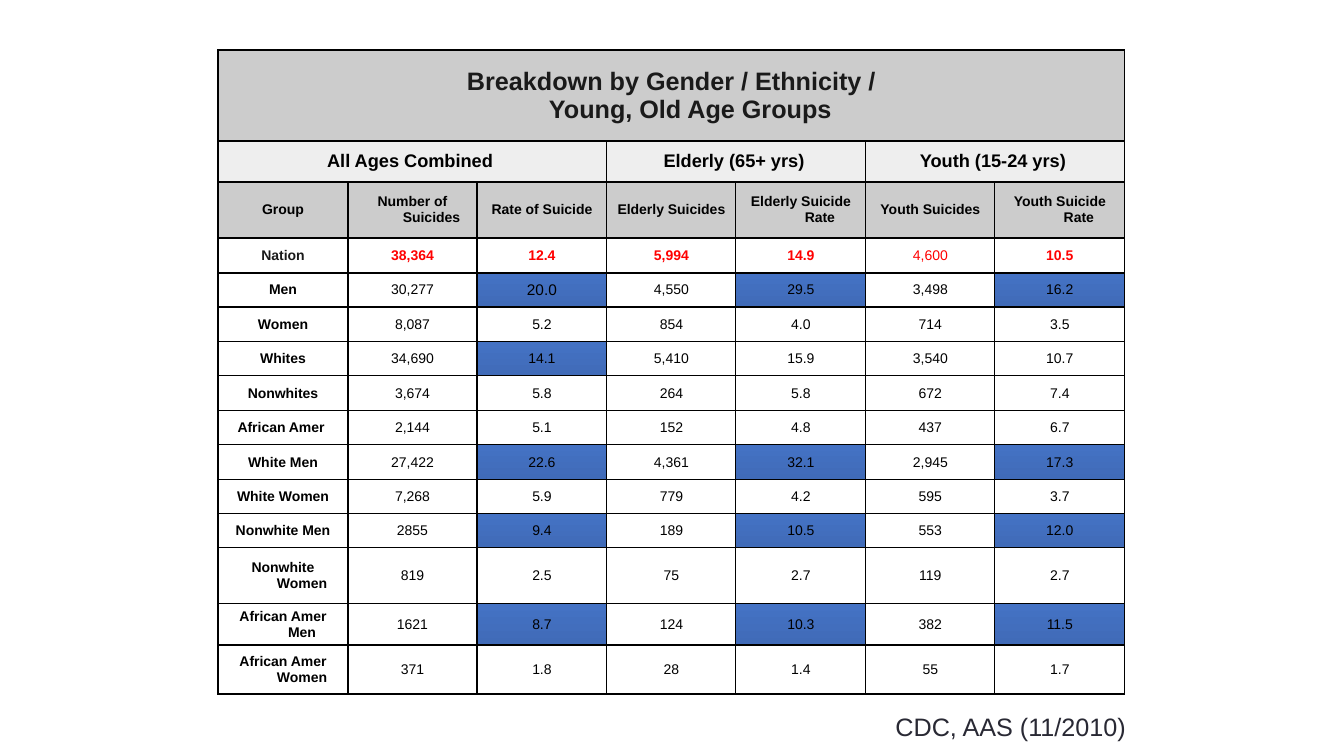
from lxml import etree
from pptx import Presentation
from pptx.dml.color import RGBColor
from pptx.enum.text import MSO_ANCHOR, PP_ALIGN
from pptx.oxml.ns import qn
from pptx.util import Pt

MIDDLE = MSO_ANCHOR.MIDDLE
CENTER, RIGHT = PP_ALIGN.CENTER, PP_ALIGN.RIGHT
BLANK_LAYOUT = 6

BLACK, DARK, RED, WHITE = "000000", "1A1A1A", "FF0000", "FFFFFF"
GRAY, LIGHT = "CCCCCC", "EEEEEE"
BLUES = ("4472C4", "406BB8")

COLUMNS = [130, 129, 130, 129, 130, 129, 130]
ROWS = [91, 41, 56, 35, 34, 35, 34, 35, 34, 35, 34, 34, 56, 41, 49]

TITLE = "Breakdown by Gender / Ethnicity /\nYoung, Old Age Groups"
AGE_GROUPS = [
    (0, 2, "All Ages Combined "),
    (3, 4, "Elderly (65+ yrs) "),
    (5, 6, "Youth (15-24 yrs) "),
]
HEADINGS = ["Group", "Number of Suicides", "Rate of Suicide", "Elderly Suicides ",
            "Elderly Suicide Rate", "Youth Suicides", "Youth Suicide Rate"]
NATION = ["Nation", "38,364", "12.4", "5,994", "14.9", "4,600", "10.5"]
ALL_RATES = (2, 4, 6)
GROUPS = [
    (["Men", "30,277", "20.0", "4,550", "29.5", "3,498", "16.2"], ALL_RATES),
    (["Women", "8,087", "5.2", "854", "4.0", "714", "3.5"], ()),
    (["Whites", "34,690", "14.1", "5,410", "15.9", "3,540", "10.7"], (2,)),
    (["Nonwhites", "3,674", "5.8", "264", "5.8", "672", "7.4"], ()),
    (["African Amer ", "2,144", "5.1", "152", "4.8", "437", "6.7"], ()),
    (["White Men", "27,422", "22.6", "4,361", "32.1", "2,945", "17.3"], ALL_RATES),
    (["White Women", "7,268", "5.9", "779", "4.2", "595", "3.7"], ()),
    (["Nonwhite Men", "2855", "9.4", "189", "10.5", "553", "12.0"], ALL_RATES),
    (["Nonwhite Women", "819", "2.5", "75", "2.7", "119", "2.7"], ()),
    (["African Amer Men", "1621", "8.7", "124", "10.3", "382", "11.5"], ALL_RATES),
    (["African Amer Women", "371", "1.8", "28", "1.4", "55", "1.7"], ()),
]


def px(n):
    return round(n * 914400 / 100.8)


def rgb(color):
    return RGBColor.from_string(color)


class Deck:
    font = "Arial"
    hanging = 38

    def __init__(self, width, height):
        self.prs = Presentation()
        self.prs.slide_width, self.prs.slide_height = px(width), px(height)
        self.s = self.prs.slides.add_slide(self.prs.slide_layouts[BLANK_LAYOUT])

    def style(self, p, text, size, color, bold, align):
        p.text = text
        p.alignment = align
        p.font.name = self.font
        p.font.size = Pt(size)
        p.font.bold = bold
        p.font.color.rgb = rgb(color)

    def table(self, left, top, columns, rows):
        frame = self.s.shapes.add_table(len(rows), len(columns), px(left), px(top),
                                        px(sum(columns)), px(sum(rows)))
        table = frame.table
        table.first_row = table.horz_banding = False
        for column, width in zip(table.columns, columns):
            column.width = px(width)
        for row, height in zip(table.rows, rows):
            row.height = px(height)
        for cell in table.iter_cells():
            self.borders(cell)
        return table

    def borders(self, cell):
        tc_pr = cell._tc.get_or_add_tcPr()
        for side in ("a:lnL", "a:lnR", "a:lnT", "a:lnB"):
            ln = etree.SubElement(tc_pr, qn(side), w=str(Pt(1)))
            fill = etree.SubElement(ln, qn("a:solidFill"))
            etree.SubElement(fill, qn("a:srgbClr"), val=BLACK)

    def cell(self, cell, text, fill=WHITE, size=10, color=BLACK, bold=False):
        cell.vertical_anchor = MIDDLE
        p = cell.text_frame.paragraphs[0]
        self.style(p, text, size, color, bold, CENTER)
        p_pr = p._p.get_or_add_pPr()
        p_pr.set("marL", str(px(self.hanging)))
        p_pr.set("indent", str(-px(self.hanging)))
        if fill == BLUES:
            cell.fill.gradient()
            cell.fill.gradient_angle = 270
            for stop, shade in zip(cell.fill.gradient_stops, fill):
                stop.color.rgb = rgb(shade)
        else:
            cell.fill.solid()
            cell.fill.fore_color.rgb = rgb(fill)

    def text(self, left, top, width, height, text, size, color, margin_right):
        tf = self.s.shapes.add_textbox(px(left), px(top), px(width), px(height)).text_frame
        tf.word_wrap = True
        tf.margin_right = px(margin_right)
        self.style(tf.paragraphs[0], text, size, color, False, RIGHT)


def main():
    deck = Deck(1344, 756)
    table = deck.table(218, 50, COLUMNS, ROWS)

    table.cell(0, 0).merge(table.cell(0, 6))
    deck.cell(table.cell(0, 0), TITLE, GRAY, 18, DARK, True)
    for first, last, name in AGE_GROUPS:
        table.cell(1, first).merge(table.cell(1, last))
        deck.cell(table.cell(1, first), name, LIGHT, 13, bold=True)
    for c, heading in enumerate(HEADINGS):
        deck.cell(table.cell(2, c), heading, GRAY, bold=True)
    for c, value in enumerate(NATION):
        deck.cell(table.cell(3, c), value, color=RED if c else DARK, bold=c != 5)
    for r, (values, high_rates) in enumerate(GROUPS, 4):
        for c, value in enumerate(values):
            deck.cell(table.cell(r, c), value, BLUES if c in high_rates else WHITE,
                      11 if (r, c) == (4, 2) else 10, bold=c == 0)

    deck.text(739, 706, 411, 40, "CDC, AAS (11/2010)", 18, "292934", 24)
    deck.prs.save("out.pptx")


if __name__ == "__main__":
    main()
